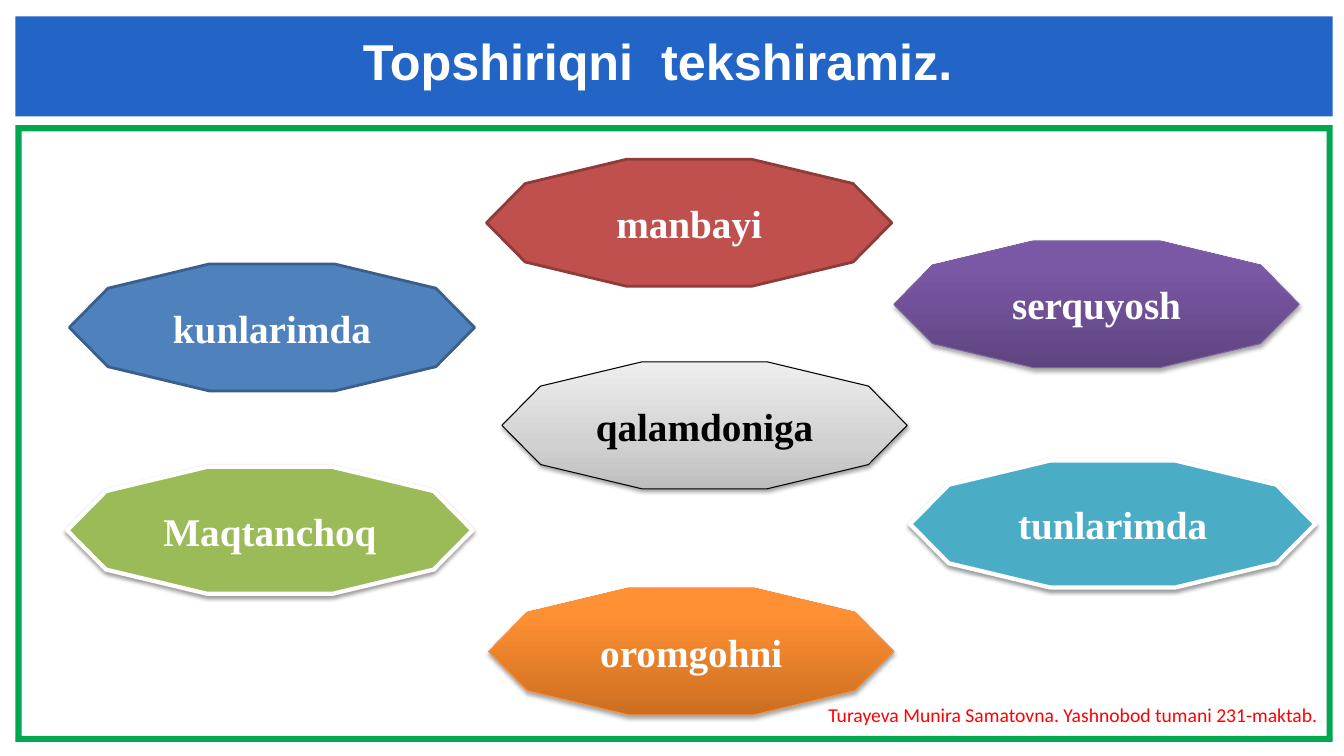
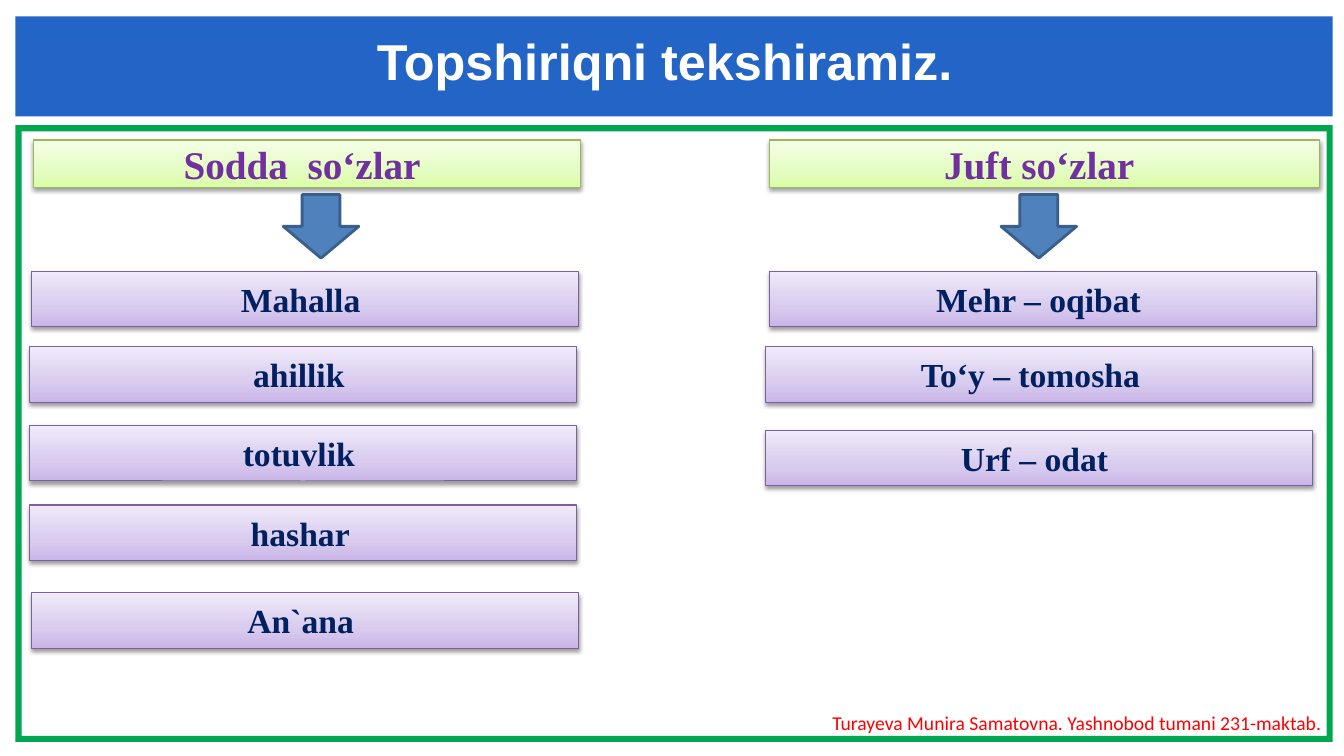
from dataclasses import dataclass

from lxml import etree
from pptx import Presentation
from pptx import util as u
from pptx.dml.color import RGBColor
from pptx.enum import shapes, text
from pptx.oxml import ns

Pt = u.Pt
Kind = shapes.MSO_SHAPE


@dataclass(frozen=True)
class Look:
    fill: tuple
    line: str = None
    weight: float = 0.75
    shadow: tuple = None


@dataclass(frozen=True)
class Lettering:
    font: str
    size: float
    color: str
    bold: bool = True


SOFT = (38, 1.6)
DEEP = (35, 1.8)
SERIF = "Times New Roman"


class Theme:
    band = Look(("2365C7",))
    frame = Look(("00A650",))
    red = Look(("C0504D",), "8E3B39", 2)
    blue = Look(("4F81BD",), "3A5F8C", 2)
    aqua = Look(("4BACC6",), "FFFFFF", 3, SOFT)
    green = Look(("9BBB59",), "FFFFFF", 3, SOFT)
    silver = Look(((0, "BDBDBD"), (35, "D1D1D1"), (100, "EEEEEE")), "000000", shadow=SOFT)
    purple = Look(((0, "5F4480"), (80, "7B58A6"), (100, "7C57A8")), "7D60A0", shadow=DEEP)
    orange = Look(((0, "CC6E20"), (80, "FF9034"), (100, "FF9136")), "F69240", shadow=DEEP)
    lime = Look(((0, "DAFDA7"), (35, "E4FCC2"), (100, "F5FFE7")), "98B955", shadow=SOFT)
    lilac = Look(((0, "C9B5E8"), (35, "D8CBEE"), (100, "F0EAF9")), "7D60A0", shadow=SOFT)

    title = Lettering("Arial", 36, "FFFFFF")
    footer = Lettering("Calibri", 14, "FF0000", False)
    badge = Lettering(SERIF, 28, "FFFFFF")
    dark_badge = Lettering(SERIF, 28, "000000")
    heading = Lettering(SERIF, 28, "7030A0")
    word = Lettering(SERIF, 24, "002060")


AUTHOR = "Turayeva Munira Samatovna. Yashnobod tumani 231-maktab."

BADGES = [
    ("qalamdoniga", 358.5, 258.5, Theme.silver, Theme.dark_badge),
    ("serquyosh", 638.5, 172, Theme.purple, Theme.badge),
    ("manbayi", 347.5, 113.8, Theme.red, Theme.badge),
    ("kunlarimda", 49.5, 188.6, Theme.blue, Theme.badge),
    ("tunlarimda", 650, 329, Theme.aqua, Theme.badge),
    ("oromgohni", 349, 420, Theme.orange, Theme.badge),
    ("Maqtanchoq", 48, 333.5, Theme.green, Theme.badge),
]

COLUMNS = [
    ("Sodda  so‘zlar", 23.8, 391, 202.3, [
        ("Mahalla", 22.3, 193.7, 6),
        ("ahillik", 21, 247.7, 6),
        ("totuvlik", 21, 304, 6),
        ("hashar", 21, 360.7, 4),
        ("An`ana", 22.3, 423.4, 6),
    ]),
    ("Juft so‘zlar", 549.4, 393, 715, [
        ("Mehr – oqibat", 549.4, 193.7, 6),
        ("To‘y – tomosha", 546.5, 247.7, 12),
        ("Urf – odat", 546.5, 307.4, 6),
    ]),
]


def assign(target, values):
    for field, value in values.items():
        setattr(target, field, value)


def add_node(parent, tag, **attributes):
    return etree.SubElement(parent, ns.qn(tag), {k: str(v) for k, v in attributes.items()})


def add_color(parent, color):
    return add_node(parent, "a:srgbClr", val=color)


class Deck:
    def __init__(self):
        self.presentation = Presentation()
        assign(self.presentation, {"slide_width": Pt(960), "slide_height": Pt(540)})
        self.slide = None

    def start(self, title, title_shift):
        self.slide = self.presentation.slides.add_slide(self.presentation.slide_layouts[6])
        frame = self.shape(Kind.FRAME, (11, 89.4, 941, 440.6), Theme.frame)
        frame.adjustments[0] = 0.01
        self.shape(Kind.RECTANGLE, (11, 11.7, 941, 71.5), Theme.band)
        self.label(title, (120, 21.6, 720, 44), Theme.title, title_shift)

    def footer(self, box):
        self.label(AUTHOR, box, Theme.footer)

    def shape(self, kind, box, look):
        shape = self.slide.shapes.add_shape(kind, *map(Pt, box))
        self.paint(shape, look.fill)
        if look.line:
            shape.line.color.rgb = RGBColor.from_string(look.line)
            shape.line.width = Pt(look.weight)
        else:
            shape.line.fill.background()
        shape.shadow.inherit = False
        if look.shadow:
            self.cast(shape, *look.shadow)
        return shape

    def paint(self, shape, stops):
        if len(stops) == 1:
            shape.fill.solid()
            shape.fill.fore_color.rgb = RGBColor.from_string(stops[0])
            return
        shape.fill.gradient()
        shape.fill.gradient_angle = 90
        stop_list = shape.element.spPr.find(".//" + ns.qn("a:gsLst"))
        for old_stop in list(stop_list):
            stop_list.remove(old_stop)
        for percent, color in stops:
            add_color(add_node(stop_list, "a:gs", pos=percent * 1000), color)

    def cast(self, shape, opacity, distance):
        effects = shape.element.spPr.find(ns.qn("a:effectLst"))
        shadow = add_node(effects, "a:outerShdw", blurRad=Pt(3.1), dist=Pt(distance),
                          dir=5400000, rotWithShape=0)
        add_node(add_color(shadow, "000000"), "a:alpha", val=opacity * 1000)

    def letter(self, frame, words, lettering):
        paragraph = frame.paragraphs[0]
        paragraph.alignment = text.PP_ALIGN.CENTER
        run = paragraph.add_run()
        run.text = words
        assign(run.font, {"name": lettering.font, "size": Pt(lettering.size),
                          "bold": lettering.bold})
        run.font.color.rgb = RGBColor.from_string(lettering.color)

    def label(self, words, box, lettering, shift=0):
        frame = self.slide.shapes.add_textbox(*map(Pt, box)).text_frame
        assign(frame, {"word_wrap": True, "margin_left": 0, "margin_top": 0,
                       "margin_right": Pt(shift), "margin_bottom": 0})
        self.letter(frame, words, lettering)

    def block(self, kind, words, box, look, lettering, shift=0):
        frame = self.shape(kind, box, look).text_frame
        assign(frame, {"word_wrap": True, "margin_right": Pt(7.2 + shift),
                       "vertical_anchor": text.MSO_ANCHOR.MIDDLE})
        self.letter(frame, words, lettering)

    def save(self):
        self.presentation.save("out.pptx")


def build_badges(deck):
    deck.start("Topshiriqni  tekshiramiz.", 20)
    for words, left, top, look, lettering in BADGES:
        deck.block(Kind.DECAGON, words, (left, top, 289.5, 90.7), look, lettering)
    deck.footer((581.8, 501.8, 369.4, 17.3))


def build_columns(deck):
    deck.start("Topshiriqni tekshiramiz.", 10)
    for heading, left, width, arrow_left, entries in COLUMNS:
        deck.block(Kind.RECTANGLE, heading, (left, 100, width, 34),
                   Theme.lime, Theme.heading, 7)
        for words, word_left, top, shift in entries:
            deck.block(Kind.RECTANGLE, words, (word_left, top, 391, 39.6),
                       Theme.lilac, Theme.word, shift)
        deck.shape(Kind.DOWN_ARROW, (arrow_left, 139, 54, 45.4), Theme.blue)
    deck.footer((587.5, 508, 363.6, 17.3))


def main():
    deck = Deck()
    build_badges(deck)
    build_columns(deck)
    deck.save()


if __name__ == "__main__":
    main()
